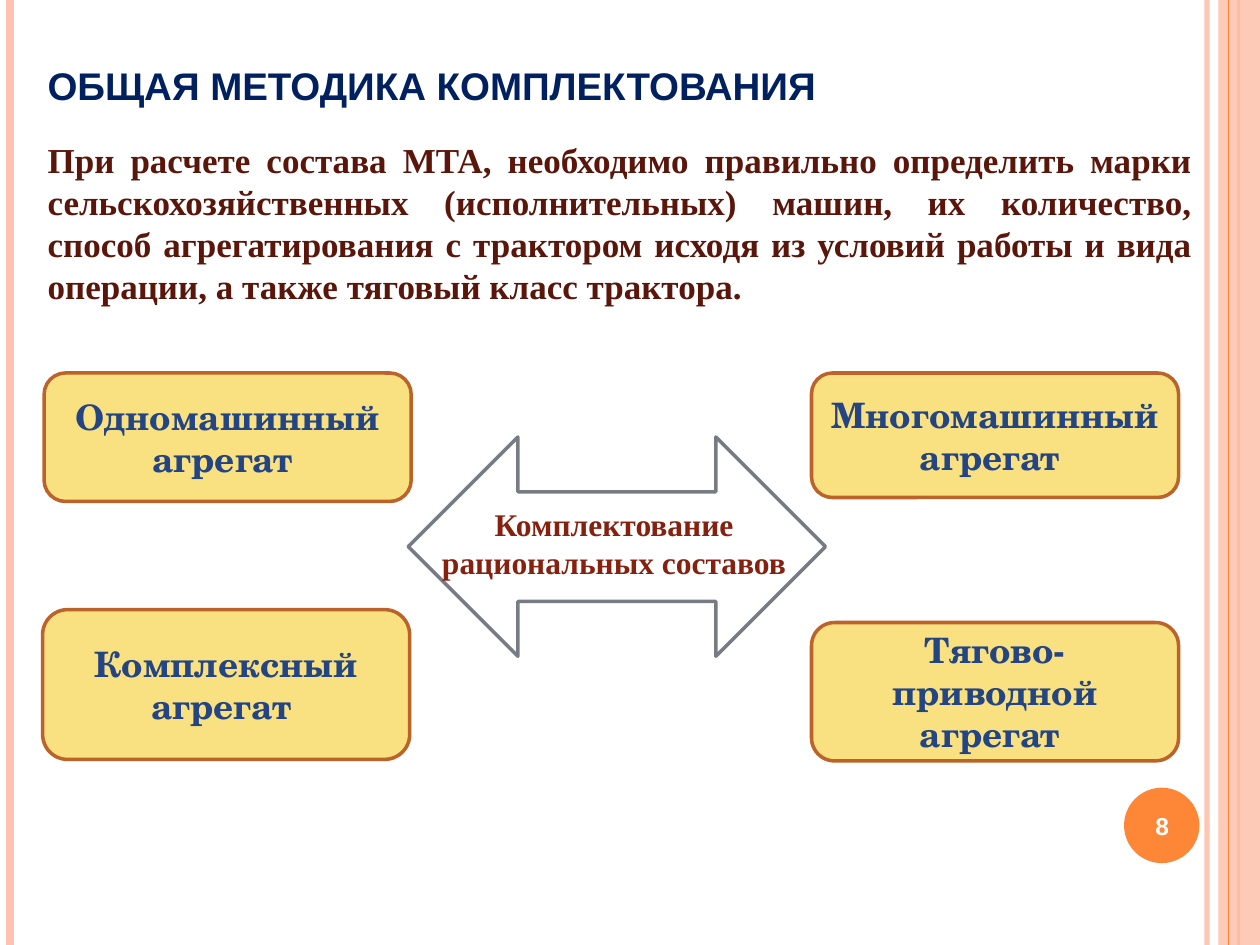
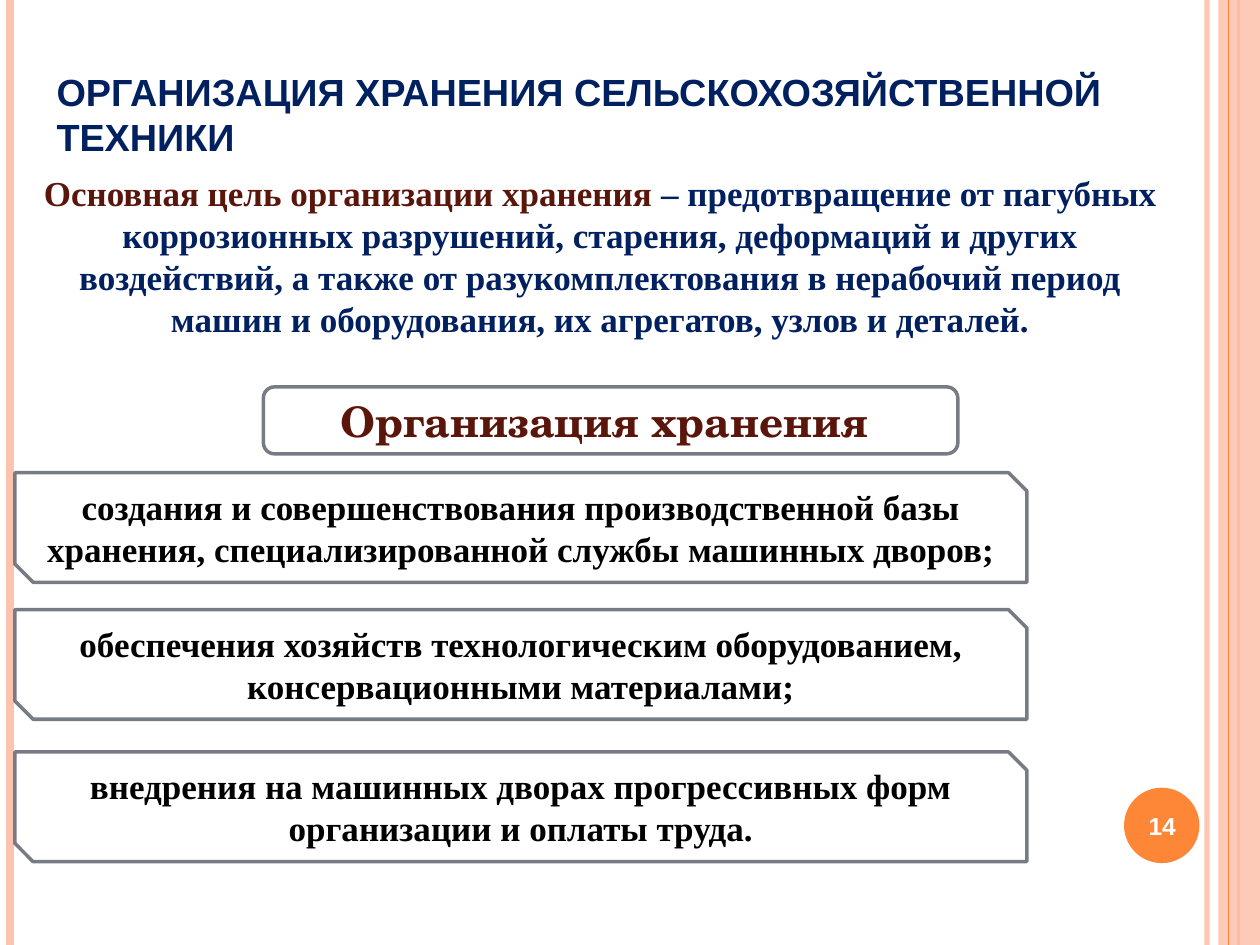
from lxml.etree import SubElement
from pptx import Presentation
from pptx.dml.color import RGBColor
from pptx.enum.shapes import MSO_CONNECTOR, MSO_SHAPE
from pptx.enum.text import MSO_ANCHOR, PP_ALIGN
from pptx.oxml.ns import qn
from pptx.util import Cm, Pt

COLORS = {
    "white": "FFFFFF",
    "black": "000000",
    "peach": "FEC3AE",
    "orange": "FE8637",
    "navy": "002060",
    "maroon": "5A160B",
    "brick": "862110",
    "blue": "244583",
    "yellow": "F9E181",
    "rust": "BC6329",
    "grey": "777C84",
}
SANS = "Arial"
SERIF = "Times New Roman"
SCHOOL = "TeX Gyre Schola"
WIDTH, HEIGHT = 25.4, 19.05


def color(name):
    return RGBColor.from_string(COLORS[name])


def fade(shape, percent):
    for node in shape.element.spPr.iter(qn("a:srgbClr")):
        SubElement(node, qn("a:alpha"), val=str(percent * 1000))


def style(run, size, font, tint):
    run.font.size = Pt(size)
    run.font.name = font
    run.font.bold = True
    run.font.color.rgb = color(tint)


def write(shape, text, size, font, tint, align=PP_ALIGN.CENTER, anchor=MSO_ANCHOR.MIDDLE):
    frame = shape.text_frame
    frame.word_wrap = True
    frame.vertical_anchor = anchor
    frame.text = text
    for para in frame.paragraphs:
        para.alignment = align
        for run in para.runs:
            style(run, size, font, tint)


def label(slide, box, text, size, font, tint, align=PP_ALIGN.CENTER, anchor=MSO_ANCHOR.TOP):
    shape = slide.shapes.add_textbox(*map(Cm, box))
    write(shape, text, size, font, tint, align, anchor)
    return shape


def block(slide, kind, box, fill, edge=None):
    shape = slide.shapes.add_shape(kind, *map(Cm, box))
    shape.shadow.inherit = False
    shape.fill.solid()
    shape.fill.fore_color.rgb = color(fill)
    if edge:
        shape.line.color.rgb = color(edge)
        shape.line.width = Pt(2)
    else:
        shape.line.fill.background()
    return shape


def stripe(slide, left, tint, width):
    line = slide.shapes.add_connector(
        MSO_CONNECTOR.STRAIGHT, Cm(left), Cm(0), Cm(left), Cm(HEIGHT))
    line.line.color.rgb = color(tint)
    line.line.width = Pt(width)
    SubElement(line.element.spPr, qn("a:effectLst"))
    return line


def title(slide, box, text, size):
    label(slide, box, text, size, SANS, "navy", PP_ALIGN.LEFT, MSO_ANCHOR.BOTTOM)


def card(slide, box, text):
    shape = block(slide, MSO_SHAPE.ROUNDED_RECTANGLE, box, "yellow", "rust")
    write(shape, text, 20, SCHOOL, "blue")


def panel(slide, top, text):
    shape = block(slide, MSO_SHAPE.SNIP_2_DIAG_RECTANGLE,
                  (0.3, top, 20.4, 2.21), "white", "grey")
    write(shape, text, 20, SERIF, "black")


def start(deck, number):
    slide = deck.slides.add_slide(deck.slide_layouts[6])
    fade(stripe(slide, 24.33, "peach", 3), 93)
    stripe(slide, 0.2, "peach", 4.5)
    stripe(slide, 24.97, "orange", 1.5)
    fade(block(slide, MSO_SHAPE.RECTANGLE, (24.56, 0, 0.84, HEIGHT), "peach"), 87)
    stripe(slide, 24.77, "orange", 0.75)
    block(slide, MSO_SHAPE.OVAL, (22.66, 15.88, 1.52, 1.52), "orange")
    label(slide, (22.58, 15.93, 1.7, 1.45), str(number), 14, SANS, "white",
          anchor=MSO_ANCHOR.MIDDLE)
    return slide


def units(deck):
    slide = start(deck, 8)
    title(slide, (0.71, 1.12, 16.18, 1.19), "ОБЩАЯ МЕТОДИКА КОМПЛЕКТОВАНИЯ", 22)
    label(slide, (0.71, 2.67, 23.57, 3.68),
          "При расчете состава МТА, необходимо правильно определить марки "
          "сельскохозяйственных (исполнительных) машин, их количество, способ "
          "агрегатирования с трактором исходя из условий работы и вида операции, "
          "а также тяговый класс трактора. ",
          20, SERIF, "maroon", PP_ALIGN.JUSTIFY)
    block(slide, MSO_SHAPE.LEFT_RIGHT_ARROW, (8.23, 8.81, 8.41, 4.42), "white", "grey")
    label(slide, (7.8, 10.06, 9.32, 1.8),
          "Комплектование \nрациональных составов ", 18, SERIF, "brick")
    cards = [
        (0.89, 7.52, 2.59, "Одномашинный агрегат "),
        (0.86, 12.29, 3.02, "Комплексный\nагрегат "),
        (16.36, 7.52, 2.51, "Многомашинный агрегат "),
        (16.36, 12.55, 2.79, "Тягово-приводной агрегат "),
    ]
    for left, top, height, text in cards:
        card(slide, (left, top, 7.4, height), text)


def storage(deck):
    slide = start(deck, 14)
    title(slide, (0.89, 1.12, 22.38, 2.21),
          "ОРГАНИЗАЦИЯ ХРАНЕНИЯ СЕЛЬСКОХОЗЯЙСТВЕННОЙ ТЕХНИКИ", 21.6)
    goal = label(slide, (0.3, 3.33, 23.6, 3.68),
                 "Основная цель организации хранения ", 20, SERIF, "maroon")
    rest = goal.text_frame.paragraphs[0].add_run()
    rest.text = ("– предотвращение от пагубных коррозионных разрушений, старения, "
                 "деформаций и других воздействий, а также от разукомплектования "
                 "в нерабочий период машин и оборудования, их агрегатов, узлов и деталей.")
    style(rest, 20, SERIF, "navy")
    head = block(slide, MSO_SHAPE.ROUNDED_RECTANGLE, (5.31, 7.8, 14, 1.35), "white", "grey")
    write(head, "Организация хранения ", 24, SCHOOL, "maroon")
    panels = [
        (9.53, "создания и совершенствования производственной базы хранения, "
               "специализированной службы машинных дворов;"),
        (12.29, "обеспечения хозяйств технологическим оборудованием, "
                "консервационными материалами;"),
        (15.16, "внедрения на машинных дворах прогрессивных форм организации "
                "и оплаты труда."),
    ]
    for top, text in panels:
        panel(slide, top, text)


def main():
    deck = Presentation()
    deck.slide_width = Cm(WIDTH)
    deck.slide_height = Cm(HEIGHT)
    units(deck)
    storage(deck)
    deck.save("out.pptx")


if __name__ == "__main__":
    main()
